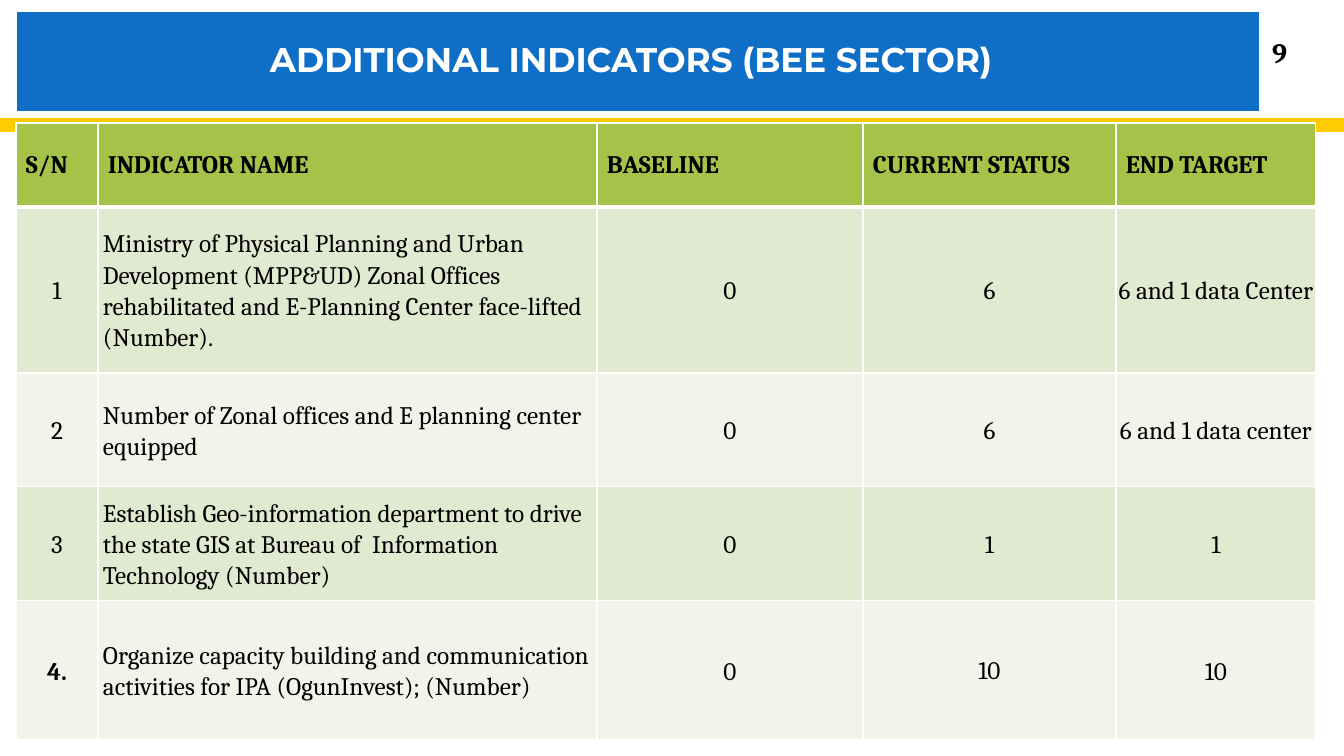
from dataclasses import dataclass

from lxml import etree
from pptx import Presentation
from pptx.dml.color import RGBColor
from pptx.enum.shapes import MSO_SHAPE
from pptx.enum.text import MSO_ANCHOR, PP_ALIGN
from pptx.oxml.ns import qn
from pptx.util import Emu, Pt

RECT = MSO_SHAPE.RECTANGLE
MIDDLE = MSO_ANCHOR.MIDDLE
LEFT, CENTER = PP_ALIGN.LEFT, PP_ALIGN.CENTER

TITLE = "ADDITIONAL INDICATORS (BEE SECTOR)"
PAGE = "9"
HEADERS = ["S/N", "INDICATOR NAME", "BASELINE", "CURRENT STATUS", "END TARGET"]
INDICATORS = [
    ["1", "Ministry of Physical Planning and Urban Development (MPP&UD) Zonal Offices "
          "rehabilitated and E-Planning Center face-lifted (Number).",
     "0", "6", "6 and 1 data Center"],
    ["2", "Number of Zonal offices and E planning center equipped",
     "0", "6", "6 and 1 data center"],
    ["3", "Establish Geo-information department to drive the state GIS at Bureau of  "
          "Information Technology (Number)",
     "0", "1", "1"],
    ["4.", "Organize capacity building and communication activities for IPA "
           "(OgunInvest); (Number)",
     "0", "10", "10"],
]
BOLD_CELLS = {"4."}

SLIDE = (1344, 756)
STRIPE_BOX = (0, 118, 1344, 14)
TITLE_BOX = (16, 11, 1244, 101)
TITLE_INSETS = (10, 5, 24, 5)
PAGE_BOX = (1230, 32, 99, 40)
TABLE_AT = (16, 123)
COLS = [82, 499, 266, 253, 200]
ROWS = [84, 166, 114, 114, 139]
HEADER_INSETS = (10, 5, 10, 5)
BODY_INSETS = [(1, 1, 1, 0), (5, 1, 5, 0), (1, 1, 1, 0), (0, 0, 0, 0), (1, 1, 1, 0)]
NAME_COL = 1


@dataclass(frozen=True)
class Theme:
    white: str = "FFFFFF"
    ink: str = "000000"
    stripe: str = "FFCC00"
    title: str = "0F6FC6"
    header: str = "A5C249"
    bands: tuple = ("E1E9D0", "F0F4E9")
    title_font: str = "Montserrat"
    body_font: str = "Cambria"
    title_size: float = 24.4
    page_size: float = 20
    table_size: float = 18
    title_line: float = 0.75
    grid_line: float = 1
    header_line: float = 3


T = Theme()


def px(n):
    return Emu(round(n * 914400 / 100.8))


def box(values):
    return [px(v) for v in values]


def paint(target, color):
    target.fill.solid()
    target.fill.fore_color.rgb = RGBColor.from_string(color)


def set_insets(target, insets):
    (target.margin_left, target.margin_top,
     target.margin_right, target.margin_bottom) = box(insets)


def write(tf, text, font, size, color, bold, align, spacing=None):
    p = tf.paragraphs[0]
    p.alignment = align
    if spacing:
        p.line_spacing = spacing
    r = p.add_run()
    r.text = text
    r.font.name = font
    r.font.size = Pt(size)
    r.font.bold = bold
    r.font.color.rgb = RGBColor.from_string(color)


def add_rect(slide, bounds, color):
    sp = slide.shapes.add_shape(RECT, *box(bounds))
    sp.shadow.inherit = False
    paint(sp, color)
    sp.line.fill.background()
    return sp


def set_borders(cell, top, bottom):
    tc_pr = cell._tc.get_or_add_tcPr()
    widths = {"a:lnL": T.grid_line, "a:lnR": T.grid_line, "a:lnT": top, "a:lnB": bottom}
    for i, (tag, width) in enumerate(widths.items()):
        ln = etree.Element(qn(tag), w=str(Pt(width)))
        fill = etree.SubElement(ln, qn("a:solidFill"))
        etree.SubElement(fill, qn("a:srgbClr"), val=T.white)
        tc_pr.insert(i, ln)


def add_title(slide):
    sp = add_rect(slide, TITLE_BOX, T.title)
    sp.line.color.rgb = RGBColor.from_string(T.white)
    sp.line.width = Pt(T.title_line)
    tf = sp.text_frame
    tf.word_wrap = True
    tf.vertical_anchor = MIDDLE
    set_insets(tf, TITLE_INSETS)
    write(tf, TITLE, T.title_font, T.title_size, T.white, True, CENTER, 0.9)


def add_page_number(slide):
    tf = slide.shapes.add_textbox(*box(PAGE_BOX)).text_frame
    tf.word_wrap = True
    tf.vertical_anchor = MIDDLE
    write(tf, PAGE, T.body_font, T.page_size, T.ink, True, CENTER)


def add_indicator_table(slide):
    size = (sum(COLS), sum(ROWS))
    table = slide.shapes.add_table(len(ROWS), len(COLS), *box(TABLE_AT + size)).table
    for column, width in zip(table.columns, COLS):
        column.width = px(width)
    for row, height in zip(table.rows, ROWS):
        row.height = px(height)
    for i, texts in enumerate([HEADERS] + INDICATORS):
        head = i == 0
        for j, text in enumerate(texts):
            cell = table.cell(i, j)
            cell.vertical_anchor = MIDDLE
            set_insets(cell, HEADER_INSETS if head else BODY_INSETS[j])
            paint(cell, T.header if head else T.bands[(i - 1) % 2])
            set_borders(cell, T.header_line if i == 1 else T.grid_line,
                        T.header_line if head else T.grid_line)
            write(cell.text_frame, text, T.body_font, T.table_size, T.ink,
                  head or text in BOLD_CELLS,
                  LEFT if head or j == NAME_COL else CENTER,
                  None if head else 1.07)


def main():
    prs = Presentation()
    prs.slide_width, prs.slide_height = box(SLIDE)
    slide = prs.slides.add_slide(prs.slide_layouts[6])
    add_rect(slide, STRIPE_BOX, T.stripe)
    add_indicator_table(slide)
    add_page_number(slide)
    add_title(slide)
    prs.save("out.pptx")


if __name__ == "__main__":
    main()
